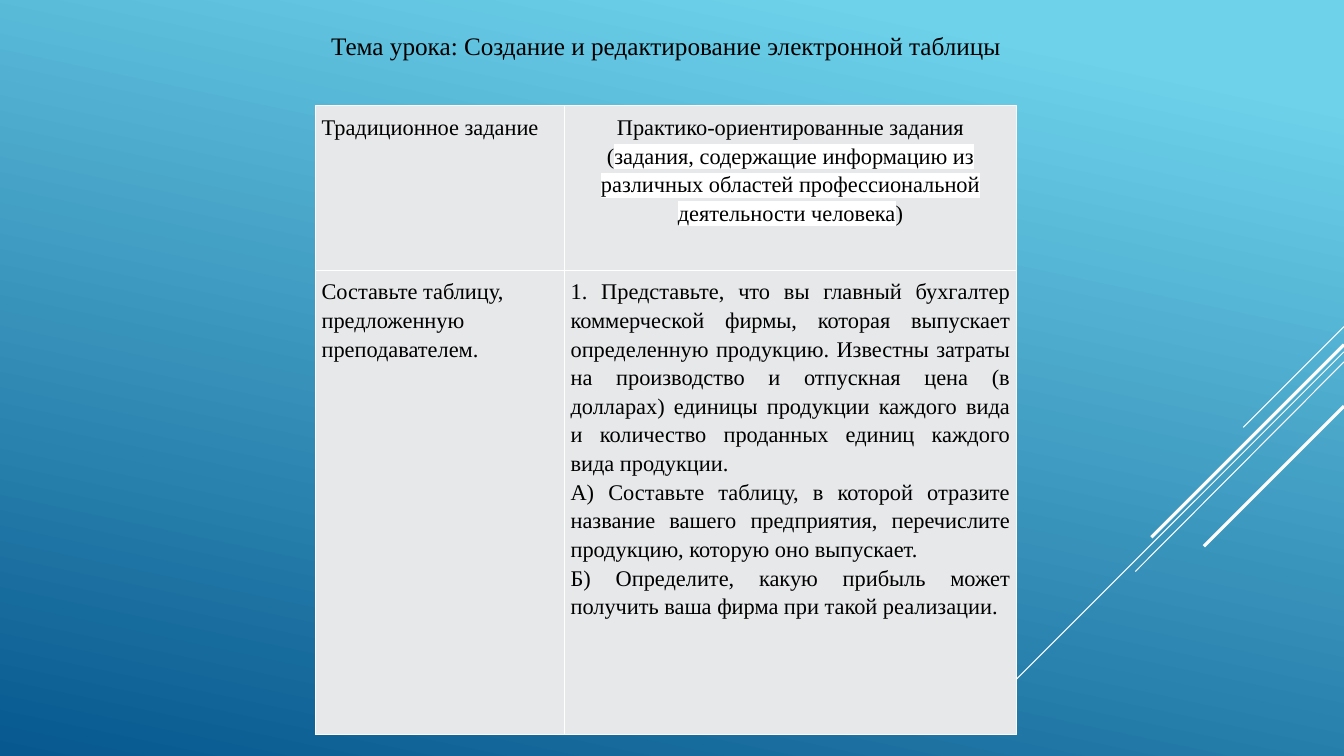
from dataclasses import dataclass

from lxml import etree
from pptx import Presentation
from pptx import util as u
from pptx.dml.color import RGBColor
from pptx.enum import shapes, text
from pptx.oxml import ns


@dataclass(frozen=True)
class Theme:
    font: str = "Times New Roman"
    title_size: int = 18
    body_size: int = 16
    ink: str = "000000"
    white: str = "FFFFFF"
    cell: str = "E7E8EA"
    gradient: tuple = ((0.1, "6ED2EB"), (1.0, "06588E"))
    gradient_angle: int = 258
    line_spacing: float = 1.15
    cell_margin: float = 0.06
    border: float = 1


class LessonSlide:
    def __init__(self, presentation, theme):
        self.theme = theme
        self.slide = presentation.slides.add_slide(presentation.slide_layouts[6])

    def background(self):
        fill = self.slide.background.fill
        fill.gradient()
        fill.gradient_angle = self.theme.gradient_angle
        for stop, (position, color) in zip(fill.gradient_stops, self.theme.gradient):
            stop.position = position
            stop.color.rgb = RGBColor.from_string(color)

    def line(self, x1, y1, x2, y2, width):
        connector = self.slide.shapes.add_connector(
            shapes.MSO_CONNECTOR.STRAIGHT, *map(u.Inches, (x1, y1, x2, y2)))
        connector.line.color.rgb = RGBColor.from_string(self.theme.white)
        connector.line.width = u.Pt(width)
        properties = connector._element.find(ns.qn("p:spPr"))
        etree.SubElement(properties, ns.qn("a:effectLst"))

    def run(self, paragraph, wording, size, highlight=None):
        run = paragraph.add_run()
        run.text = wording
        run.font.size = u.Pt(size)
        run.font.color.rgb = RGBColor.from_string(self.theme.ink)
        if highlight:
            mark = etree.SubElement(run.font._element, ns.qn("a:highlight"))
            etree.SubElement(mark, ns.qn("a:srgbClr"), val=highlight)
        run.font.name = self.theme.font

    def title(self, wording, left, top, width, height):
        box = self.slide.shapes.add_textbox(*map(u.Inches, (left, top, width, height)))
        frame = box.text_frame
        frame.word_wrap = True
        frame.auto_size = text.MSO_AUTO_SIZE.SHAPE_TO_FIT_TEXT
        paragraph = frame.paragraphs[0]
        paragraph.alignment = text.PP_ALIGN.CENTER
        self.run(paragraph, wording, self.theme.title_size)

    def cell_borders(self, cell):
        properties = cell._tc.get_or_add_tcPr()
        for index, side in enumerate(("lnL", "lnR", "lnT", "lnB")):
            border = etree.Element(ns.qn(f"a:{side}"), w=str(u.Pt(self.theme.border)))
            fill = etree.SubElement(border, ns.qn("a:solidFill"))
            etree.SubElement(fill, ns.qn("a:srgbClr"), val=self.theme.white)
            properties.insert(index, border)

    def cell(self, cell, alignment, paragraphs):
        cell.fill.solid()
        cell.fill.fore_color.rgb = RGBColor.from_string(self.theme.cell)
        self.cell_borders(cell)
        margin = u.Inches(self.theme.cell_margin)
        cell.margin_left = cell.margin_right = margin
        cell.margin_top = cell.margin_bottom = margin
        frame = cell.text_frame
        for index, runs in enumerate(paragraphs):
            paragraph = frame.add_paragraph() if index else frame.paragraphs[0]
            paragraph.alignment = alignment
            paragraph.line_spacing = self.theme.line_spacing
            for wording, highlight in runs:
                self.run(paragraph, wording, self.theme.body_size, highlight)

    def table(self, left, top, widths, heights, rows):
        table = self.slide.shapes.add_table(
            len(heights), len(widths), u.Inches(left), u.Inches(top),
            u.Inches(sum(widths)), u.Inches(sum(heights))).table
        table.first_row = table.horz_banding = False
        for column, width in zip(table.columns, widths):
            column.width = u.Inches(width)
        for row, height, contents in zip(table.rows, heights, rows):
            row.height = u.Inches(height)
            for cell, (alignment, paragraphs) in zip(row.cells, contents):
                self.cell(cell, alignment, paragraphs)


THEME = Theme()
ALIGN = text.PP_ALIGN

# Diagonal rays: x and y of the lower end, y at the right edge, width
RIGHT_EDGE = 13.33
RAYS = (
    (12.33, 4.24, 3.24, 0.75),
    (10.07, 6.75, 3.49, 0.75),
    (11.26, 5.67, 3.59, 0.75),
    (11.42, 5.33, 3.42, 2.25),
    (11.94, 5.42, 4.03, 2.25),
)

# Each cell: alignment, then paragraphs of (wording, highlight) runs
TASKS = (
    (
        (ALIGN.JUSTIFY, [[("Традиционное задание", None)]]),
        (ALIGN.CENTER, [[
            ("Практико-ориентированные задания (", None),
            ("задания, содержащие информацию из различных областей "
             "профессиональной деятельности человека", THEME.white),
            (")", None),
        ]]),
    ),
    (
        (ALIGN.LEFT, [[("Составьте таблицу, предложенную преподавателем.", None)]]),
        (ALIGN.JUSTIFY, [
            [("1. Представьте, что вы главный бухгалтер коммерческой фирмы, которая "
              "выпускает определенную продукцию. Известны затраты на производство и "
              "отпускная цена (в долларах) единицы продукции каждого вида и количество "
              "проданных единиц каждого вида продукции.", None)],
            [("А) Составьте таблицу, в которой отразите название вашего предприятия, "
              "перечислите продукцию, которую оно выпускает.", None)],
            [("Б) Определите, какую прибыль может получить ваша фирма при такой "
              "реализации.", None)],
        ]),
    ),
)


def main():
    presentation = Presentation()
    presentation.slide_width = u.Inches(13.33)
    presentation.slide_height = u.Inches(7.5)
    lesson = LessonSlide(presentation, THEME)

    # Backdrop
    lesson.background()
    for x, y, edge_y, width in RAYS:
        lesson.line(RIGHT_EDGE, edge_y, x, y, width)

    # Comparison of tasks, with the lesson topic above
    lesson.table(3.13, 1.05, (2.47, 4.48), (1.63, 4.61), TASKS)
    lesson.title("Тема урока: Создание и редактирование электронной таблицы",
                 3.13, 0.25, 6.95, 0.4)

    presentation.save("out.pptx")


if __name__ == "__main__":
    main()
